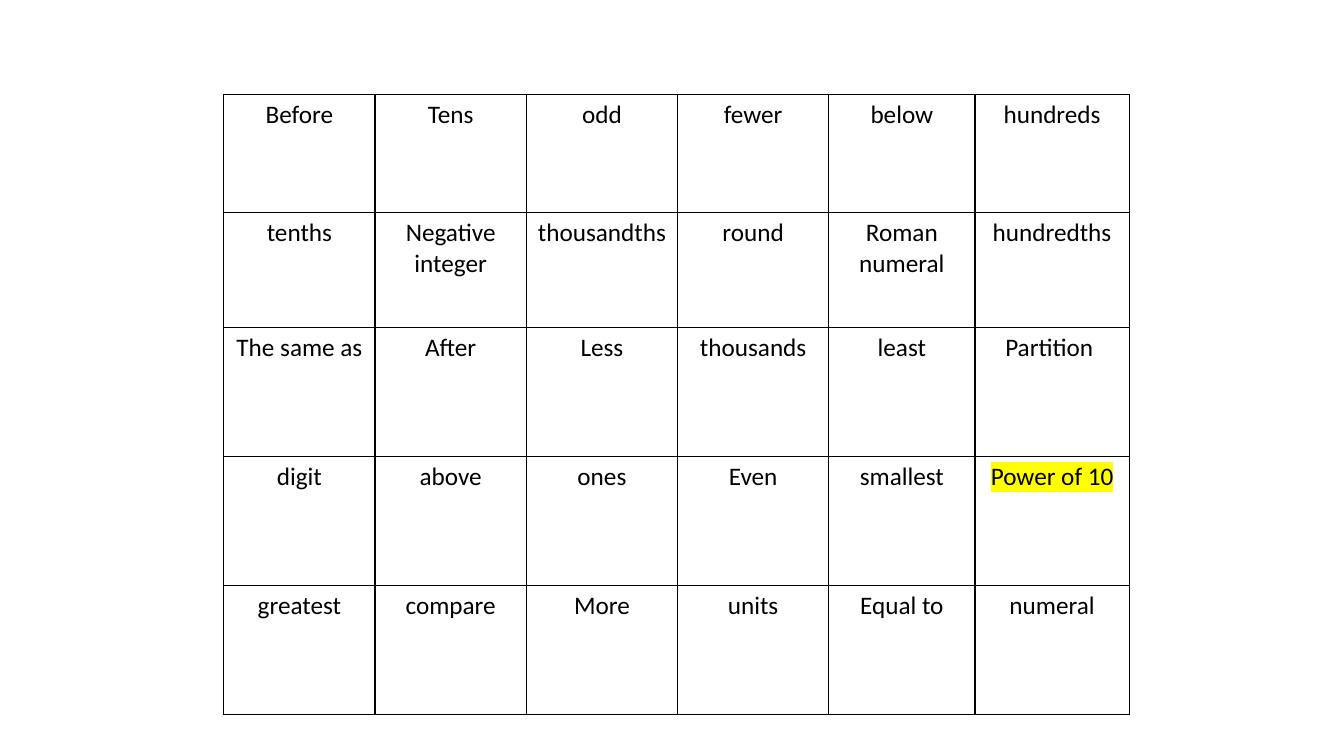
import dataclasses

import lxml.etree
import pptx
import pptx.dml.color
import pptx.enum.text
import pptx.oxml.ns
import pptx.util

Inches = pptx.util.Inches
qn = pptx.oxml.ns.qn


@dataclasses.dataclass
class Theme:
    font: str = "Calibri"
    size: int = 18
    ink: str = "000000"
    paper: str = "FFFFFF"
    mark: str = "FFFF00"
    rule: float = 1


theme = Theme()


def color(code):
    return pptx.dml.color.RGBColor.from_string(code)


def add_color(parent, tag, code):
    node = lxml.etree.SubElement(parent, qn(tag))
    lxml.etree.SubElement(node, qn("a:srgbClr"), val=code)


# Words and grid sizes
words = [
    ["Before", "Tens", "odd", "fewer", "below", "hundreds"],
    ["tenths", "Negative integer", "thousandths", "round", "Roman numeral", "hundredths"],
    ["The same as", "After", "Less", "thousands", "least", "Partition "],
    ["digit", "above", "ones", "Even", "smallest", "Power of 10"],
    ["greatest", "compare", "More", "units", "Equal to", "numeral"],
]
marked = "Power of 10"
widths = [1.5] * 4 + [1.45, 1.53]
heights = [1.17, 1.14] + [1.28] * 3

# Slide
deck = pptx.Presentation()
deck.slide_width = Inches(13.33)
deck.slide_height = Inches(7.5)
slide = deck.slides.add_slide(deck.slide_layouts[6])
slide.background.fill.solid()
slide.background.fill.fore_color.rgb = color(theme.paper)

# Table
table = slide.shapes.add_table(
    len(heights), len(widths), Inches(2.22), Inches(0.94),
    Inches(sum(widths)), Inches(sum(heights))).table
table.first_row = False
table.horz_banding = False
for column, width in zip(table.columns, widths):
    column.width = Inches(width)
for row, height in zip(table.rows, heights):
    row.height = Inches(height)

# Cells
for row, line in zip(table.rows, words):
    for cell, word in zip(row.cells, line):
        cell.text = word
        para = cell.text_frame.paragraphs[0]
        para.alignment = pptx.enum.text.PP_ALIGN.CENTER
        para.font.name = theme.font
        para.font.size = pptx.util.Pt(theme.size)
        para.font.color.rgb = color(theme.ink)

        # Borders come before the fill in the cell's XML
        props = cell._tc.get_or_add_tcPr()
        for side in ("a:lnL", "a:lnR", "a:lnT", "a:lnB"):
            edge = lxml.etree.SubElement(
                props, qn(side), w=str(pptx.util.Pt(theme.rule)))
            add_color(edge, "a:solidFill", theme.ink)
        cell.fill.solid()
        cell.fill.fore_color.rgb = color(theme.paper)

        # Highlighted word
        if word == marked:
            add_color(para.runs[0]._r.get_or_add_rPr(), "a:highlight", theme.mark)

deck.save("out.pptx")
